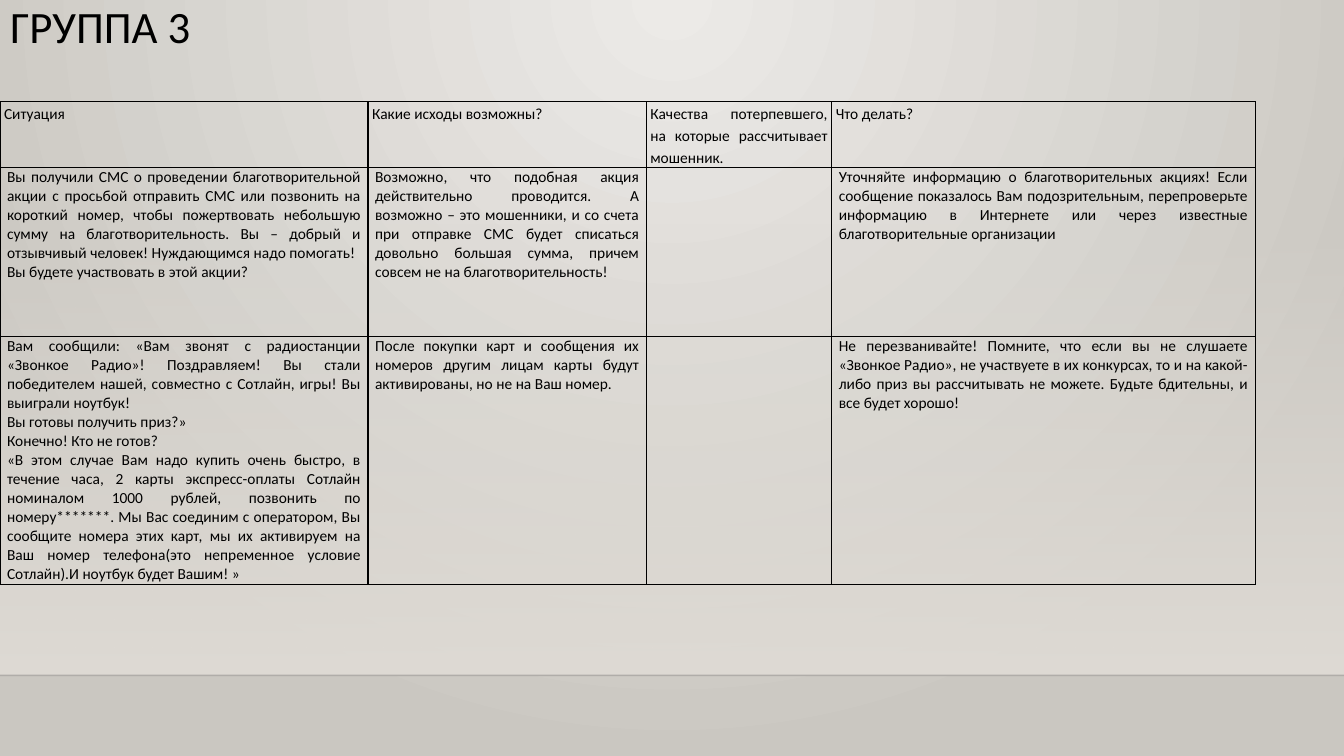
from dataclasses import dataclass

from lxml import etree
from pptx import Presentation
from pptx.dml.color import RGBColor
from pptx.enum.shapes import MSO_CONNECTOR, MSO_SHAPE
from pptx.enum.text import MSO_ANCHOR, MSO_AUTO_SIZE, PP_ALIGN
from pptx.oxml.ns import qn
from pptx.util import Inches, Pt

LEFT, JUSTIFY = PP_ALIGN.LEFT, PP_ALIGN.JUSTIFY
TOP, NO_FIT = MSO_ANCHOR.TOP, MSO_AUTO_SIZE.NONE
RECT, STRAIGHT = MSO_SHAPE.RECTANGLE, MSO_CONNECTOR.STRAIGHT
WIDE, HIGH = 13.33, 7.5


@dataclass(frozen=True)
class Theme:
    font: str = "Calibri"
    ink: str = "000000"
    rule: str = "000001"
    light: str = "ECEAE7"
    dark: str = "CAC7C1"
    floor: str = "DFDBD5"
    title: int = 32
    body: int = 11
    line: int = 1


HEAD = [
    "Ситуация",
    "Какие исходы возможны?",
    "Качества потерпевшего, на которые рассчитывает мошенник.",
    "Что делать?",
]
CHARITY = [
    "Вы получили СМС о проведении благотворительной акции с просьбой отправить "
    "СМС или позвонить на короткий номер, чтобы пожертвовать небольшую сумму на "
    "благотворительность. Вы – добрый и отзывчивый человек! Нуждающимся надо помогать!\n"
    "Вы будете участвовать в этой акции?",
    "Возможно, что подобная акция действительно проводится. А возможно – это "
    "мошенники, и со счета при отправке СМС будет списаться довольно большая "
    "сумма, причем совсем не на благотворительность!",
    "",
    "Уточняйте информацию о благотворительных акциях! Если сообщение показалось "
    "Вам подозрительным, перепроверьте информацию в Интернете или через известные "
    "благотворительные организации",
]
PRIZE = [
    "Вам сообщили: «Вам звонят с радиостанции «Звонкое Радио»! Поздравляем! Вы "
    "стали победителем нашей, совместно с Сотлайн, игры! Вы выиграли ноутбук!\n"
    "Вы готовы получить приз?»\n"
    "Конечно! Кто не готов?\n"
    "«В этом случае Вам надо купить очень быстро, в течение часа, 2 карты "
    "экспресс-оплаты Сотлайн номиналом 1000 рублей, позвонить по номеру*******. "
    "Мы Вас соединим с оператором, Вы сообщите номера этих карт, мы их активируем "
    "на Ваш номер телефона(это непременное условие Сотлайн).И ноутбук будет Вашим! »",
    "После покупки карт и сообщения их номеров другим лицам карты будут "
    "активированы, но не на Ваш номер.",
    "",
    "Не перезванивайте! Помните, что если вы не слушаете «Звонкое Радио», не "
    "участвуете в их конкурсах, то и на какой-либо приз вы рассчитывать не можете. "
    "Будьте бдительны, и все будет хорошо!",
]


def write(frame, text, font, size, color, align=LEFT, space=1.0):
    """Fill a text frame, one paragraph per line of text."""
    frame.text = text
    frame.word_wrap = True
    for para in frame.paragraphs:
        para.alignment = align
        para.line_spacing = space
        para.font.name = font
        para.font.size = Pt(size)
        para.font.color.rgb = RGBColor.from_string(color)


def blend(fill, *colors):
    fill.gradient()
    for stop, color in zip(fill.gradient_stops, colors):
        stop.color.rgb = RGBColor.from_string(color)


def fade(item, percent):
    """Set the opacity of the first colour in a shape."""
    color = item.element.find(".//" + qn("a:srgbClr"))
    etree.SubElement(color, qn("a:alpha"), val=str(percent * 1000))


def border(cell, color, width):
    props = cell._tc.get_or_add_tcPr()
    for side in "LRTB":
        line = etree.SubElement(props, qn("a:ln" + side), w=str(Pt(width)))
        solid = etree.SubElement(line, qn("a:solidFill"))
        etree.SubElement(solid, qn("a:srgbClr"), val=color)


class Page:
    def __init__(self, slide, theme):
        self.slide, self.theme = slide, theme

    def backdrop(self):
        """Radial gradient centred on the top edge."""
        blend(self.slide.background.fill, self.theme.light, self.theme.dark)
        lin = self.slide.element.find(".//" + qn("a:lin"))
        ring = etree.Element(qn("a:path"), attrib={"path": "circle"})
        etree.SubElement(ring, qn("a:fillToRect"), l="43000", t="0", r="43000", b="100000")
        lin.getparent().replace(lin, ring)

    def floor(self, top, base):
        """Band that fades in downwards and ends in a thin rule."""
        band = self.slide.shapes.add_shape(
            RECT, 0, Inches(top), Inches(WIDE), Inches(base - top))
        band.shadow.inherit = False
        band.line.fill.background()
        blend(band.fill, self.theme.floor, self.theme.floor)
        band.fill.gradient_angle = 270
        fade(band, 0)
        rule = self.slide.shapes.add_connector(
            STRAIGHT, 0, Inches(base), Inches(WIDE), Inches(base))
        rule.line.color.rgb = RGBColor.from_string(self.theme.rule)
        rule.line.width = Pt(self.theme.line)
        fade(rule, 20)
        etree.SubElement(rule.element.spPr, qn("a:effectLst"))

    def title(self, text, wide, high):
        box = self.slide.shapes.title
        box.left, box.top = 0, 0
        box.width, box.height = Inches(wide), Inches(high)
        frame = box.text_frame
        frame.vertical_anchor, frame.auto_size = TOP, NO_FIT
        write(frame, text, self.theme.font, self.theme.title, self.theme.ink, space=0.9)
        self.slide.shapes.element.append(box.element)

    def table(self, top, cols, rows, data):
        grid = self.slide.shapes.add_table(
            len(rows), len(cols), 0, Inches(top),
            Inches(sum(cols)), Inches(sum(rows))).table
        grid.first_row = grid.horz_banding = False
        for col, wide in zip(grid.columns, cols):
            col.width = Inches(wide)
        for index, (row, high) in enumerate(zip(grid.rows, rows)):
            row.height = Inches(high)
            inset, space = (0.07, 1.0) if index else (0.04, 1.15)
            for cell, text in zip(row.cells, data[index]):
                self.cell(cell, text, inset, space)

    def cell(self, cell, text, inset, space):
        cell.margin_left = cell.margin_right = Inches(inset)
        cell.margin_top = cell.margin_bottom = 0
        border(cell, self.theme.ink, self.theme.line)
        cell.fill.background()
        write(cell.text_frame, text, self.theme.font, self.theme.body,
              self.theme.ink, align=JUSTIFY, space=space)


def main():
    deck = Presentation()
    deck.slide_width, deck.slide_height = Inches(WIDE), Inches(HIGH)
    page = Page(deck.slides.add_slide(deck.slide_layouts[5]), Theme())
    page.backdrop()
    page.floor(2.21, 6.7)
    page.title("ГРУППА 3", 11.5, 1.45)
    page.table(1.01, [3.65, 2.76, 1.84, 4.2], [0.65, 1.68, 2.46], [HEAD, CHARITY, PRIZE])
    deck.save("out.pptx")


if __name__ == "__main__":
    main()
